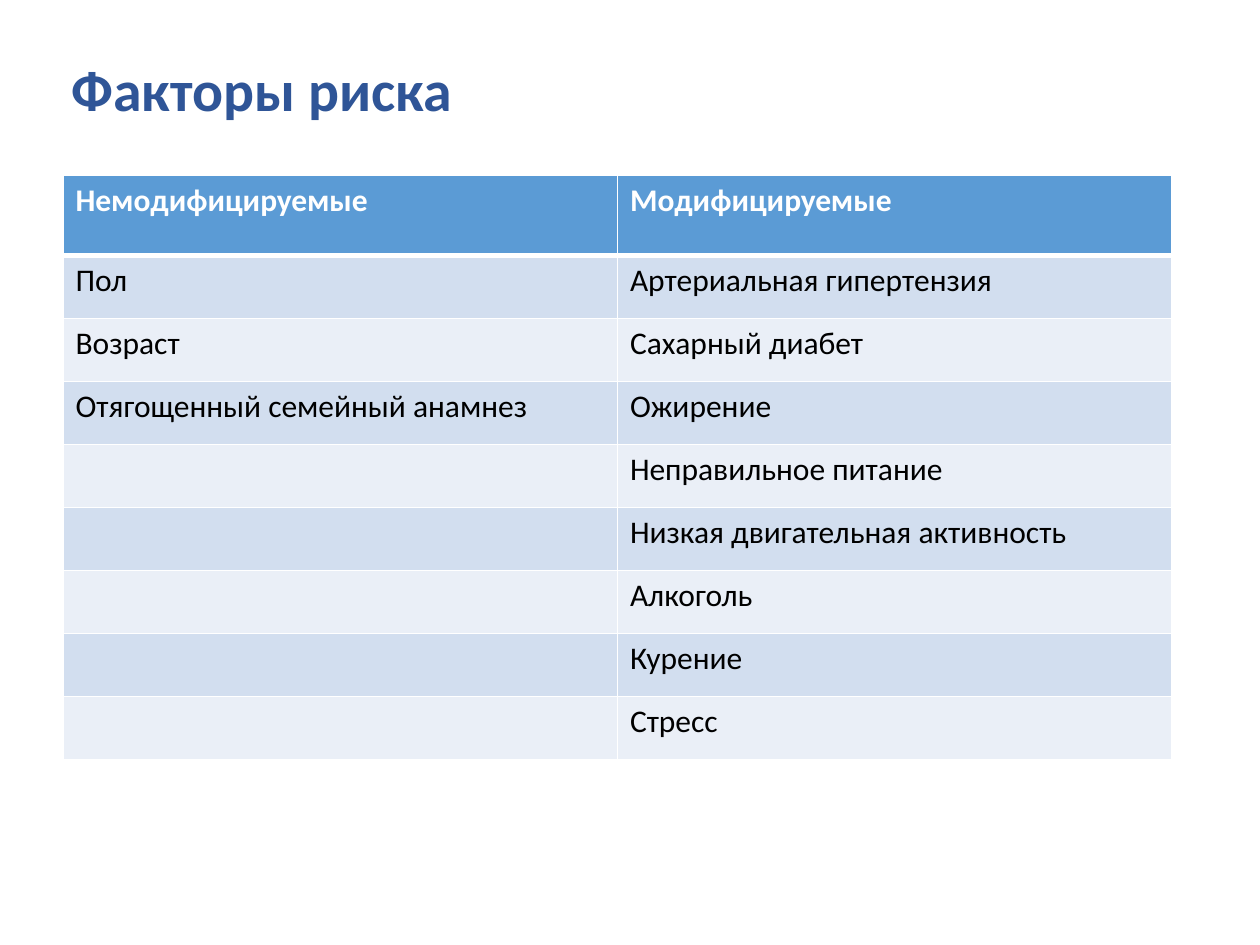
from dataclasses import dataclass

from lxml import etree
from pptx import Presentation
from pptx.dml.color import RGBColor
from pptx.enum.text import MSO_ANCHOR, PP_ALIGN
from pptx.oxml.ns import qn
from pptx.table import Table, _Cell
from pptx.text.text import TextFrame
from pptx.util import Inches, Pt

LEFT, JUSTIFY = PP_ALIGN.LEFT, PP_ALIGN.JUSTIFY
MIDDLE = MSO_ANCHOR.MIDDLE

FONT = "Calibri"
TITLE_BLUE = RGBColor(0x2F, 0x55, 0x97)
HEADER_BLUE = RGBColor(0x5B, 0x9B, 0xD5)
BAND_DARK = RGBColor(0xD2, 0xDE, 0xEF)
BAND_LIGHT = RGBColor(0xEA, 0xEF, 0xF7)
WHITE = RGBColor(0xFF, 0xFF, 0xFF)
BLACK = RGBColor(0x00, 0x00, 0x00)

SLIDE_WIDTH, SLIDE_HEIGHT = Inches(10), Inches(7.5)
HEADER_HEIGHT, ROW_HEIGHT = Inches(0.64), Inches(0.5)


@dataclass(frozen=True)
class Box:
    """A place given as shares of the slide's size."""
    left: float
    top: float
    width: float
    height: float

    def lengths(self) -> tuple[int, int, int, int]:
        return (int(self.left * SLIDE_WIDTH), int(self.top * SLIDE_HEIGHT),
                int(self.width * SLIDE_WIDTH), int(self.height * SLIDE_HEIGHT))


@dataclass(frozen=True)
class RiskRow:
    fixed: str
    modifiable: str


TITLE_BOX = Box(0.047, 0.041, 0.817, 0.115)
TABLE_BOX = Box(0.05, 0.185, 0.88, 0.62)

HEADER = RiskRow("Немодифицируемые", "Модифицируемые")
RISKS = [
    RiskRow("Пол", "Артериальная гипертензия"),
    RiskRow("Возраст", "Сахарный диабет"),
    RiskRow("Отягощенный семейный анамнез", "Ожирение"),
    RiskRow("", "Неправильное питание"),
    RiskRow("", "Низкая двигательная активность"),
    RiskRow("", "Алкоголь"),
    RiskRow("", "Курение"),
    RiskRow("", "Стресс"),
]


def write_text(frame: TextFrame, text: str, *, size: float = 18,
               color: RGBColor = BLACK, bold: bool = False,
               align: PP_ALIGN = LEFT, line_spacing: float = 1.0) -> None:
    paragraph = frame.paragraphs[0]
    paragraph.alignment = align
    paragraph.line_spacing = line_spacing
    if not text:
        return
    run = paragraph.add_run()
    run.text = text
    run.font.name = FONT
    run.font.size = Pt(size)
    run.font.bold = bold
    run.font.color.rgb = color


def set_borders(cell: _Cell, *, top: float = 1, bottom: float = 1) -> None:
    """White lines, which must stand before the fill in the cell properties."""
    properties = cell._tc.get_or_add_tcPr()
    widths = {"a:lnL": 1, "a:lnR": 1, "a:lnT": top, "a:lnB": bottom}
    for position, (tag, width) in enumerate(widths.items()):
        line = etree.Element(qn(tag), w=str(Pt(width)))
        fill = etree.SubElement(line, qn("a:solidFill"))
        etree.SubElement(fill, qn("a:srgbClr"), val=str(WHITE))
        properties.insert(position, line)


def fill_row(table: Table, index: int, row: RiskRow) -> None:
    is_header = index == 0
    background = HEADER_BLUE if is_header else (BAND_LIGHT, BAND_DARK)[index % 2]
    table.rows[index].height = HEADER_HEIGHT if is_header else ROW_HEIGHT
    for column, text in enumerate((row.fixed, row.modifiable)):
        cell = table.cell(index, column)
        cell.fill.solid()
        cell.fill.fore_color.rgb = background
        set_borders(cell, top=3 if index == 1 else 1,
                    bottom=3 if is_header else 1)
        write_text(cell.text_frame, text, bold=is_header,
                   color=WHITE if is_header else BLACK,
                   align=JUSTIFY if column and not is_header else LEFT)


def main() -> None:
    presentation = Presentation()
    presentation.slide_width, presentation.slide_height = SLIDE_WIDTH, SLIDE_HEIGHT
    slide = presentation.slides.add_slide(presentation.slide_layouts[6])

    # Title
    title_frame = slide.shapes.add_textbox(*TITLE_BOX.lengths()).text_frame
    title_frame.word_wrap = True
    title_frame.vertical_anchor = MIDDLE
    write_text(title_frame, "Факторы риска", size=33, color=TITLE_BLUE,
               bold=True, line_spacing=0.9)

    # Table of risk factors
    rows = [HEADER, *RISKS]
    table = slide.shapes.add_table(len(rows), 2, *TABLE_BOX.lengths()).table
    for index, row in enumerate(rows):
        fill_row(table, index, row)

    presentation.save("out.pptx")


if __name__ == "__main__":
    main()
